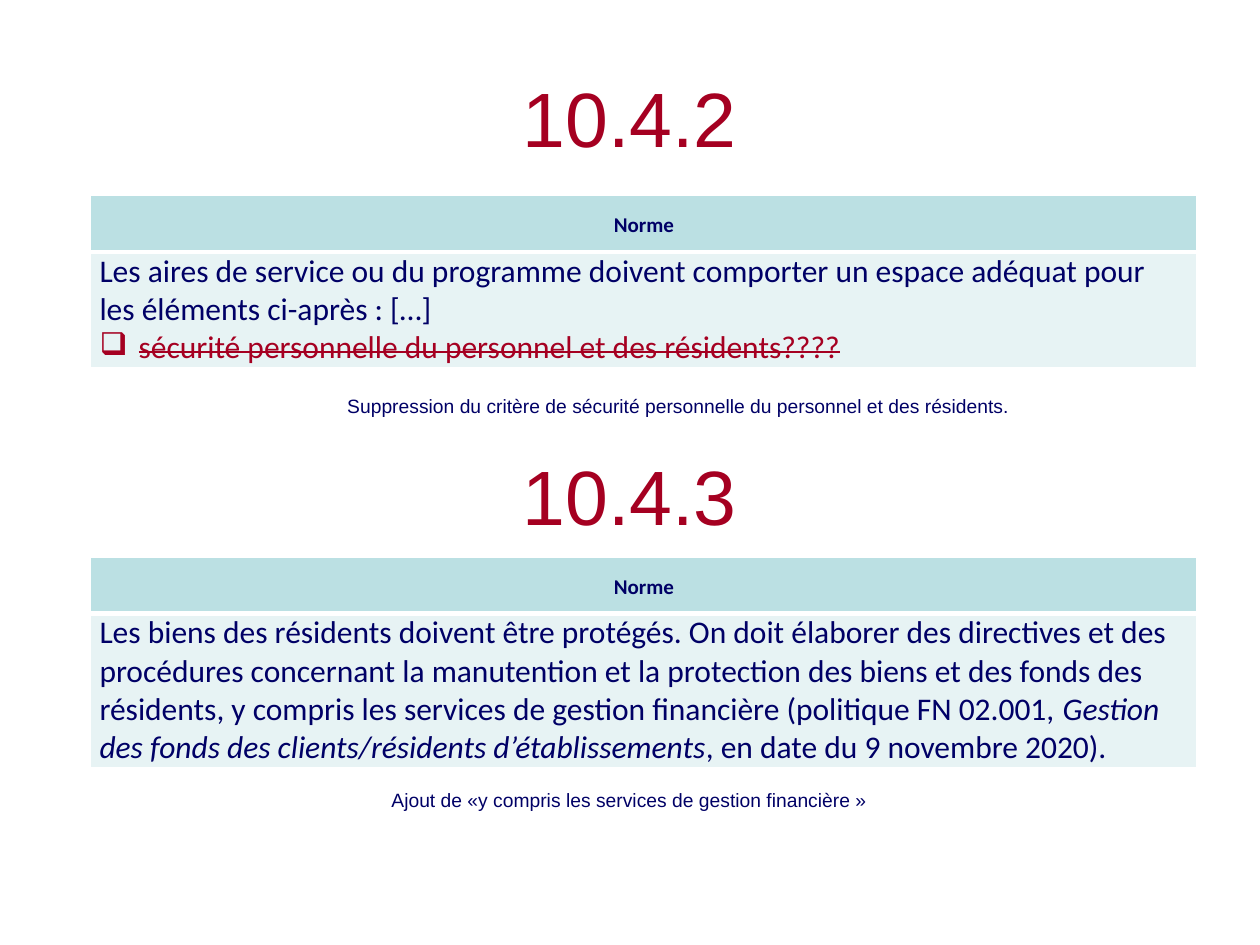
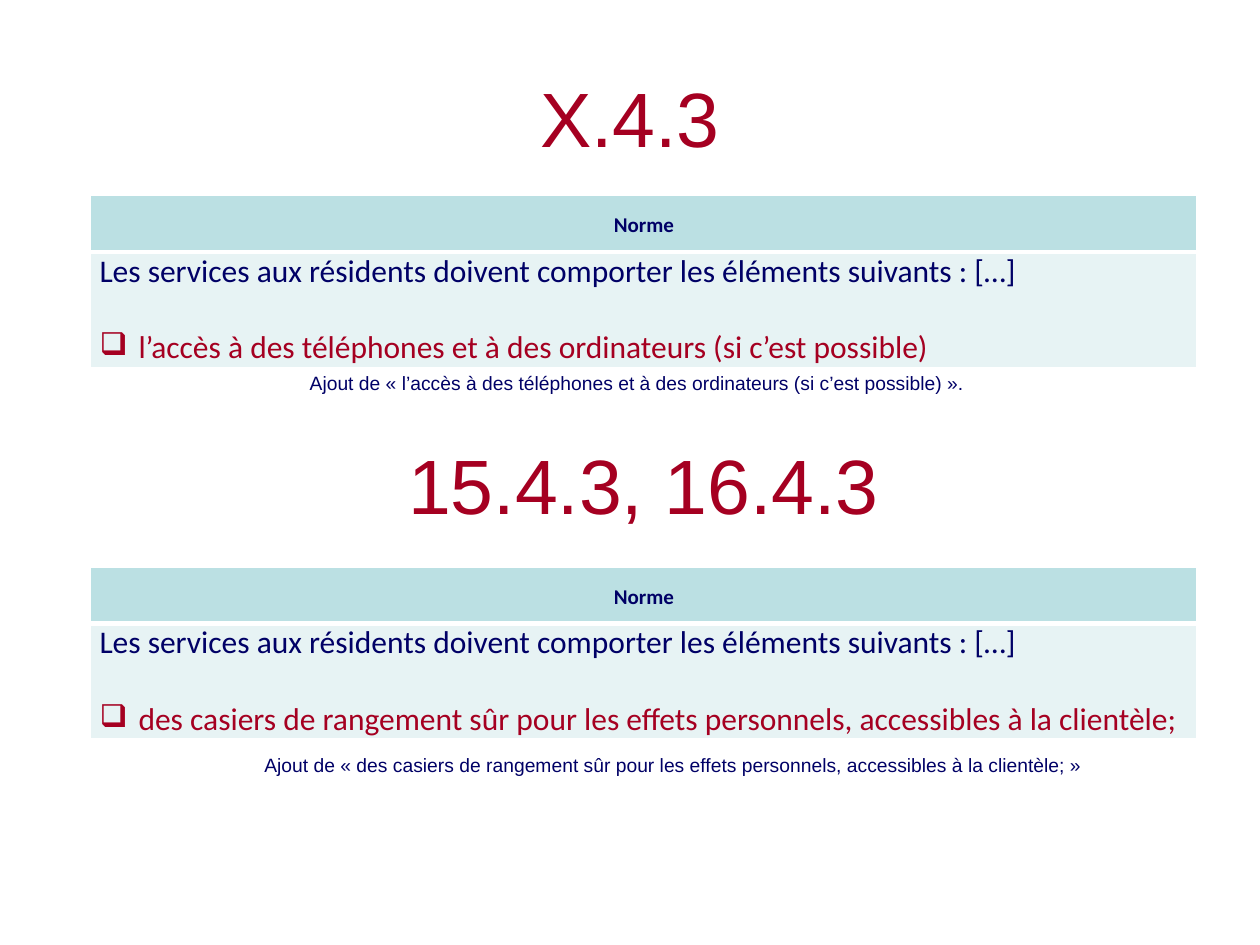
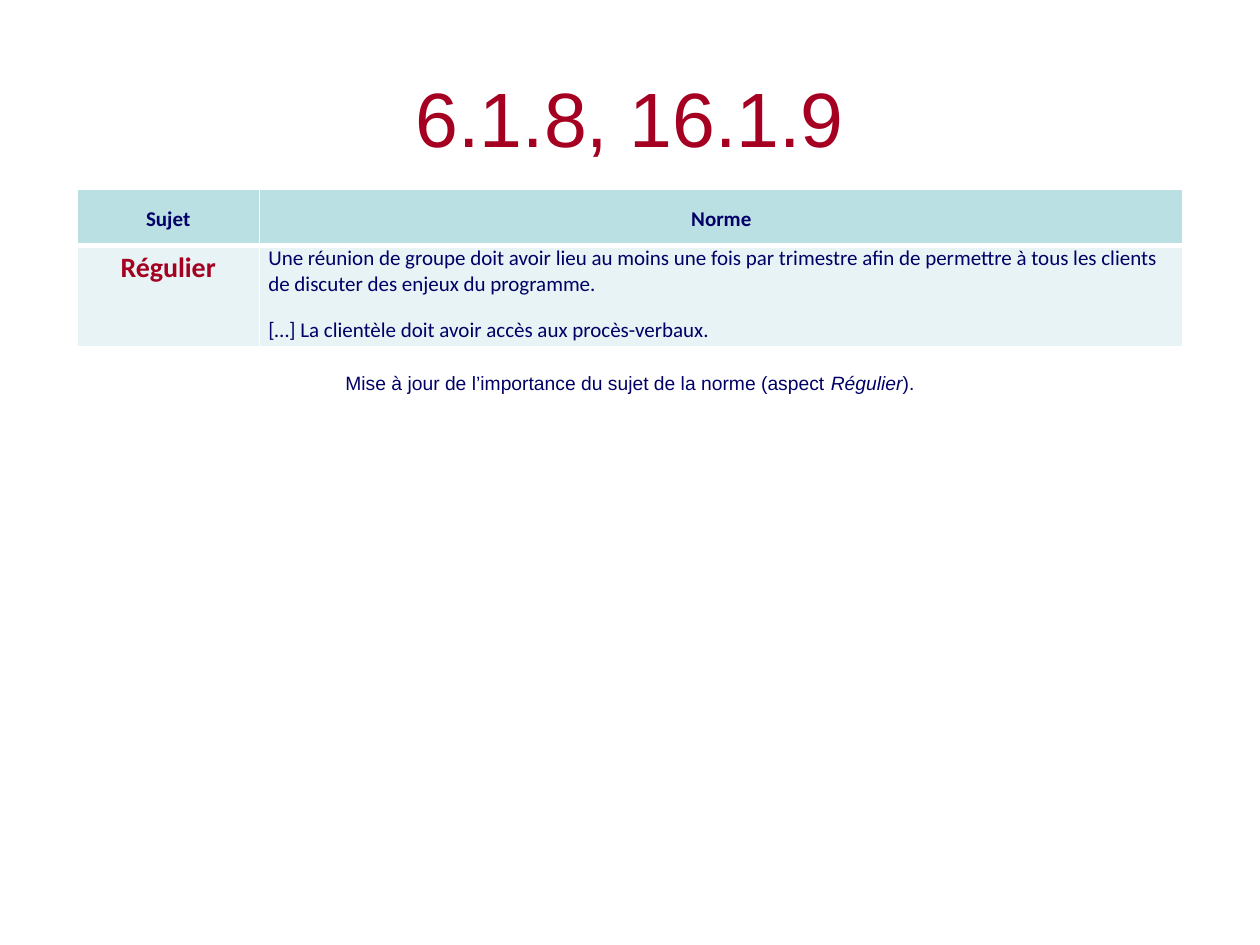
import pptx
import pptx.util
import pptx.dml.color
import pptx.enum.text
import pptx.oxml.ns
from lxml import etree

INCH = pptx.util.Inches
ALIGN = pptx.enum.text.PP_ALIGN
ANCHOR = pptx.enum.text.MSO_ANCHOR

HUES = {"red": "A50021", "navy": "000066", "head": "BBE0E3", "body": "E7F3F4", "edge": "FFFFFF"}

STYLES = {
    "title": {"name": "Arial", "size": 44, "hue": "red", "bold": False},
    "note": {"name": "Arial", "size": 11, "hue": "navy"},
    "head": {"name": "Calibri", "size": 12, "hue": "navy", "bold": True},
    "norm": {"name": "Calibri", "size": 18, "hue": "navy", "bold": False},
    "item": {"name": "Calibri", "size": 18, "hue": "red", "bold": False},
    "topic": {"name": "Calibri", "size": 16, "hue": "red", "bold": True},
    "small": {"name": "Calibri", "size": 12, "hue": "navy", "bold": False},
}
FORMS = {
    "title": {"alignment": ALIGN.CENTER},
    "note": {"alignment": ALIGN.CENTER},
    "head": {"alignment": ALIGN.CENTER, "line_spacing": 1.15, "space_after": pptx.util.Pt(12)},
    "topic": {"alignment": ALIGN.CENTER, "line_spacing": 1.15, "space_after": pptx.util.Pt(6)},
    "small": {"space_after": pptx.util.Pt(6)},
}

TITLE_BOX = (0.5, 0.3, 9, 1.25)
HEAD_TALL = 0.45
WIDE = [8.78]
SPLIT = [1.45, 7.33]
GAP = 22

SERVICES = ("norm", ["Les services aux résidents doivent comporter les éléments suivants : […]"])

SLIDES = [
    {
        "title": "10.4.2",
        "tables": [
            {"at": (0.72, 1.55), "cols": WIDE, "tall": 0.9, "heads": ["Norme"], "cells": [[
                ("norm", ["Les aires de service ou du programme doivent comporter un espace adéquat pour les éléments ci-après : […]"]),
                ("item", [("sécurité personnelle du personnel et des résidents????", "strike")]),
            ]]},
            {"at": (0.72, 4.42), "cols": WIDE, "tall": 1.2, "heads": ["Norme"], "cells": [[
                ("norm", [
                    "Les biens des résidents doivent être protégés. On doit élaborer des directives et des procédures concernant la manutention et la protection des biens et des fonds des résidents, y compris les services de gestion financière (politique FN 02.001, ",
                    ("Gestion des fonds des clients/résidents d’établissements", "italic"),
                    ", en date du 9 novembre 2020).",
                ]),
            ]]},
        ],
        "texts": [
            ("note", (2.44, 3.08, 5.89, 0.67), ["Suppression du critère de sécurité personnelle du personnel et des résidents."]),
            ("title", (0.5, 3.3, 9, 1.25), ["10.4.3"]),
            ("note", (2.33, 6.21, 5.33, 0.19), ["Ajout de «y compris les services de gestion financière »"]),
        ],
    },
    {
        "title": "X.4.3",
        "tables": [
            {"at": (0.72, 1.55), "cols": WIDE, "tall": 0.9, "heads": ["Norme"], "cells": [[
                SERVICES,
                ("item", ["l’accès à des téléphones et à des ordinateurs (si c’est possible)"], GAP),
            ]]},
            {"at": (0.72, 4.5), "cols": WIDE, "tall": 0.9, "heads": ["Norme"], "cells": [[
                SERVICES,
                ("item", ["des casiers de rangement sûr pour les effets personnels, accessibles à la clientèle;"], GAP),
            ]]},
        ],
        "align": ALIGN.LEFT,
        "texts": [
            ("title", (2.61, 3.42, 5, 0.84), ["15.4.3, 16.4.3"]),
            ("note", (2.36, 2.9, 6, 0.67), ["Ajout de « l’accès à des téléphones et à des ordinateurs (si c’est possible) »."]),
            ("note", (2, 5.93, 7.33, 0.4), ["Ajout de « des casiers de rangement sûr pour les effets personnels, accessibles à la clientèle; »"]),
        ],
    },
    {
        "title": "6.1.8, 16.1.9",
        "tables": [
            {"at": (0.61, 1.5), "cols": SPLIT, "tall": 0.8, "heads": ["Sujet", "Norme"], "cells": [
                [("topic", ["Régulier"])],
                [
                    ("small", ["Une réunion de groupe doit avoir lieu au moins une fois par trimestre afin de permettre à tous les clients de discuter des enjeux du programme."]),
                    ("small", ["[…] La clientèle doit avoir accès aux procès-verbaux."], 6),
                ],
            ]},
        ],
        "texts": [
            ("note", (2, 2.9, 6, 0.67), ["Mise à jour de l’importance du sujet de la norme (aspect ", ("Régulier", "italic"), ")."]),
        ],
    },
]


def paint(hue):
    return pptx.dml.color.RGBColor.from_string(HUES[hue])


def sub(node, tag, **attrs):
    return etree.SubElement(node, pptx.oxml.ns.qn(tag), attrs)


def add_run(para, text, style, mark=None):
    run = para.add_run()
    run.text = text
    form = dict(STYLES[style])
    run.font.color.rgb = paint(form.pop("hue"))
    form["size"] = pptx.util.Pt(form["size"])
    if mark == "italic":
        form["italic"] = True
    for key, value in form.items():
        setattr(run.font, key, value)
    if mark == "strike":
        run._r.get_or_add_rPr().set("strike", "sngStrike")


def write(frame, paras):
    for i, (style, runs, *before) in enumerate(paras):
        para = frame.add_paragraph() if i else frame.paragraphs[0]
        for key, value in FORMS.get(style, {}).items():
            setattr(para, key, value)
        if before:
            para.space_before = pptx.util.Pt(before[0])
        if style == "item":
            props = para._p.get_or_add_pPr()
            props.set("marL", str(INCH(0.31)))
            props.set("indent", str(-INCH(0.31)))
            sub(props, "a:buChar", char="❑")
        for run in runs:
            text, mark = (run, None) if isinstance(run, str) else run
            add_run(para, text, style, mark)


def set_cell(cell, paras, kind, anchor, lines):
    form = {"margin_left": INCH(0.07), "margin_right": INCH(0.07),
            "margin_top": 0, "margin_bottom": 0, "vertical_anchor": anchor}
    for key, value in form.items():
        setattr(cell, key, value)
    props = cell._tc.get_or_add_tcPr()
    for side, width in zip("LRTB", lines):
        line = sub(props, f"a:ln{side}", w=str(pptx.util.Pt(width)))
        sub(sub(line, "a:solidFill"), "a:srgbClr", val=HUES["edge"])
    cell.fill.solid()
    cell.fill.fore_color.rgb = paint(kind)
    write(cell.text_frame, paras)


def add_grid(slide, data):
    cols, tall = data["cols"], data["tall"]
    box = (*data["at"], sum(cols), HEAD_TALL + tall)
    table = slide.shapes.add_table(2, len(cols), *map(INCH, box)).table
    for row, size in zip(table.rows, (HEAD_TALL, tall)):
        row.height = INCH(size)
    for i, width in enumerate(cols):
        table.columns[i].width = INCH(width)
        head = [("head", [data["heads"][i]])]
        set_cell(table.cell(0, i), head, "head", ANCHOR.MIDDLE, (1, 1, 1, 3))
        set_cell(table.cell(1, i), data["cells"][i], "body", ANCHOR.TOP, (1, 1, 3, 1))


def set_text(shape, style, runs):
    frame = shape.text_frame
    frame.word_wrap = True
    frame.auto_size = pptx.enum.text.MSO_AUTO_SIZE.NONE
    frame.vertical_anchor = ANCHOR.MIDDLE if style == "title" else ANCHOR.TOP
    write(frame, [(style, runs)])


def add_slide(deck, data):
    slide = deck.slides.add_slide(deck.slide_layouts[5])
    title = slide.shapes.title
    for key, value in zip(("left", "top", "width", "height"), TITLE_BOX):
        setattr(title, key, INCH(value))
    set_text(title, "title", [data["title"]])
    for grid in data["tables"]:
        add_grid(slide, grid)
    for style, box, runs in data["texts"]:
        shape = slide.shapes.add_textbox(*map(INCH, box))
        set_text(shape, style, runs)
        if style == "note" and "align" in data:
            shape.text_frame.paragraphs[0].alignment = data["align"]


def main():
    deck = pptx.Presentation()
    deck.slide_width, deck.slide_height = INCH(10), INCH(7.5)
    for data in SLIDES:
        add_slide(deck, data)
    deck.save("out.pptx")


if __name__ == "__main__":
    main()
